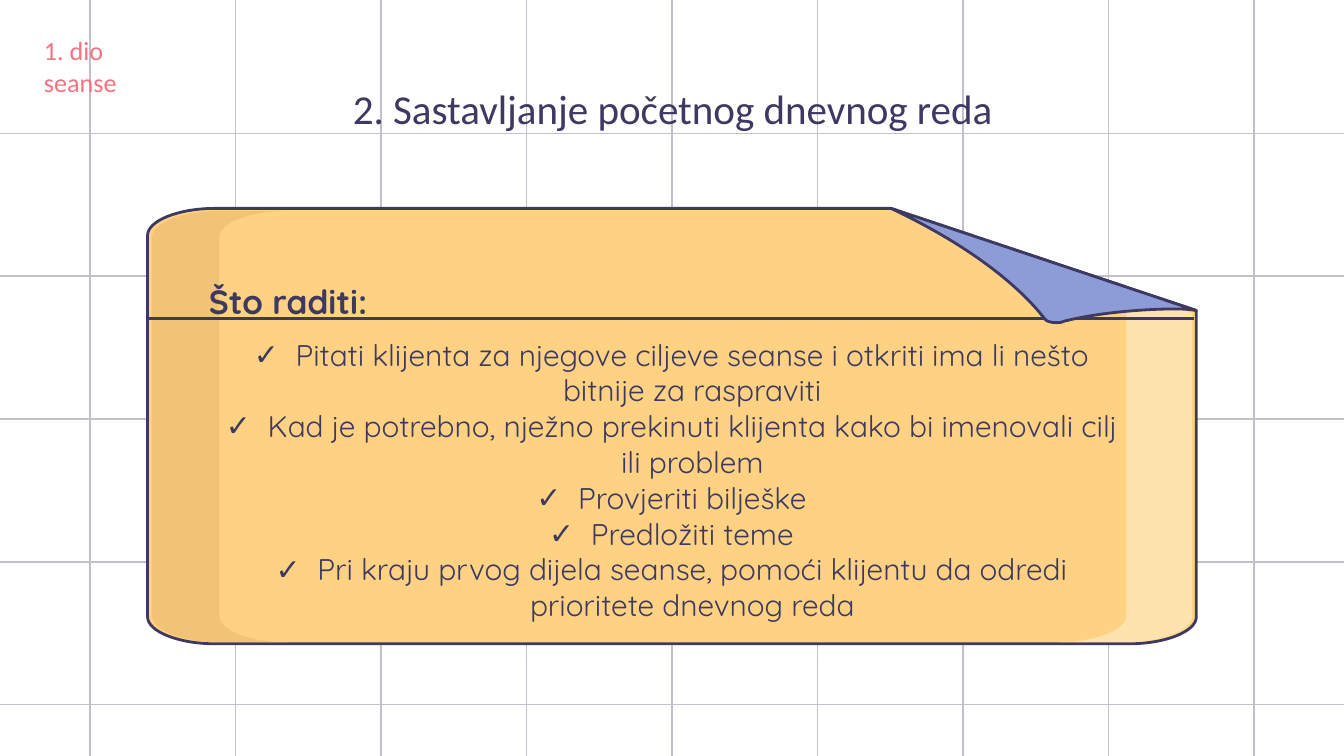
"""Build a slide with a folded paper note listing the steps for setting a session agenda."""
from lxml import etree
from pptx import Presentation
from pptx.dml.color import RGBColor
from pptx.enum.shapes import MSO_CONNECTOR
from pptx.enum.text import MSO_ANCHOR, PP_ALIGN
from pptx.oxml.ns import qn
from pptx.util import Cm, Pt

STRAIGHT = MSO_CONNECTOR.STRAIGHT
TOP, MIDDLE = MSO_ANCHOR.TOP, MSO_ANCHOR.MIDDLE
LEFT, CENTER = PP_ALIGN.LEFT, PP_ALIGN.CENTER

COLORS = {
    "ink": "3D3961", "grid": "C2C1CB", "note": "FFD283", "shade": "F2C277",
    "light": "FFE3AF", "fold": "8D9BD6", "label": "F67280",
}
WIDTH, HEIGHT = 25.4, 14.29
BLEED = 0.46
GRID_X = (1.7, 2.75, 9)
GRID_Y = (2.52, 2.7, 5)

TITLE = "2. Sastavljanje početnog dnevnog reda"
PART = "1. dio seanse"
HEADING = "Što raditi:"
STEPS = [
    "Pitati klijenta za njegove ciljeve seanse i otkriti ima li nešto bitnije za raspraviti",
    "Kad je potrebno, nježno prekinuti klijenta kako bi imenovali cilj ili problem",
    "Provjeriti bilješke",
    "Predložiti teme",
    "Pri kraju prvog dijela seanse, pomoći klijentu da odredi prioritete dnevnog reda",
]

NOTE = [
    (21.34, 12.17), (22.02, 12.17, 22.61, 11.94, 22.61, 11.66), (22.61, 10.85),
    (22.61, 5.87), (16.84, 3.94), (4.06, 3.94), (3.38, 3.94, 2.79, 4.17, 2.79, 4.45),
    (2.79, 10.85), (2.79, 11.66), (2.79, 11.94, 3.38, 12.17, 4.06, 12.17),
]
SHADE = [
    (5.41, 12.14), (4.7, 12.14, 4.14, 11.91, 4.14, 11.63), (4.14, 10.82), (4.14, 4.5),
    (4.14, 4.22, 4.7, 3.99, 5.41, 3.99), (4.14, 3.99),
    (3.43, 3.99, 2.87, 4.22, 2.87, 4.5), (2.87, 10.82), (2.87, 11.63),
    (2.87, 11.91, 3.43, 12.14, 4.14, 12.14),
]
LIGHT = [
    (21.29, 12.14), (21.95, 12.14, 22.53, 11.91, 22.53, 11.63), (22.53, 10.82),
    (22.53, 5.92), (21.29, 5.49), (21.29, 10.82), (21.29, 11.63),
    (21.29, 11.91, 20.7, 12.14, 20.02, 12.14),
]
FOLD = [
    (19.96, 6.1), (20.02, 6.1, 20.07, 6.1, 20.12, 6.07),
    (20.85, 5.89, 21.74, 5.84, 22.23, 5.84), (22.45, 5.84, 22.61, 5.87, 22.61, 5.87),
    (16.84, 3.94), (18.72, 4.83, 19.48, 5.69, 19.74, 6.02),
    (19.76, 6.07, 19.86, 6.1, 19.96, 6.1),
]


def rgb(name):
    return RGBColor.from_string(COLORS[name])


def add_line(s, x1, y1, x2, y2, color, width):
    line = s.shapes.add_connector(STRAIGHT, Cm(x1), Cm(y1), Cm(x2), Cm(y2))
    line.line.color.rgb = rgb(color)
    line.line.width = Pt(width)
    etree.SubElement(line._element.spPr, qn("a:effectLst"))


def curve_segments(sp, outline):
    segments = list(sp._element.iter(qn("a:lnTo")))
    for segment, values in zip(segments, outline[1:]):
        if len(values) == 2:
            continue
        curve = etree.Element(qn("a:cubicBezTo"))
        for x, y in zip(values[::2], values[1::2]):
            etree.SubElement(curve, qn("a:pt"), x=str(Cm(x) - sp.left), y=str(Cm(y) - sp.top))
        segment.getparent().replace(segment, curve)


def add_outline(s, outline, color, edge=False):
    ends = [(Cm(values[-2]), Cm(values[-1])) for values in outline]
    builder = s.shapes.build_freeform(*ends[0])
    builder.add_line_segments(ends[1:], close=False)
    sp = builder.convert_to_shape()
    curve_segments(sp, outline)
    etree.SubElement(next(sp._element.iter(qn("a:path"))), qn("a:close"))
    sp.shadow.inherit = False
    sp.fill.solid()
    sp.fill.fore_color.rgb = rgb(color)
    if edge:
        sp.line.color.rgb = rgb("ink")
        sp.line.width = Pt(1.5)
    else:
        sp.line.fill.background()


def add_text(s, box, lines, font, size, color="ink", bold=False, align=CENTER,
             anchor=MIDDLE, inset=(0, 0), indent=(0, 0), bullet=None):
    tf = s.shapes.add_textbox(*map(Cm, box)).text_frame
    tf.word_wrap = True
    tf.vertical_anchor = anchor
    tf.margin_left = tf.margin_right = Cm(inset[0])
    tf.margin_top = tf.margin_bottom = Cm(inset[1])
    for i, line in enumerate(lines):
        p = tf.add_paragraph() if i else tf.paragraphs[0]
        p.text = line
        p.alignment = align
        pPr = p._p.get_or_add_pPr()
        pPr.set("marL", str(Cm(indent[0])))
        pPr.set("indent", str(Cm(indent[1])))
        if bullet:
            clr = etree.SubElement(pPr, qn("a:buClr"))
            etree.SubElement(clr, qn("a:srgbClr"), val=COLORS[color])
            etree.SubElement(pPr, qn("a:buFont"), typeface=font)
            etree.SubElement(pPr, qn("a:buChar"), char=bullet)
        f = p.runs[0].font
        f.name, f.size, f.bold = font, Pt(size), bold
        f.color.rgb = rgb(color)


def main():
    prs = Presentation()
    prs.slide_width, prs.slide_height = Cm(WIDTH), Cm(HEIGHT)
    s = prs.slides.add_slide(prs.slide_layouts[6])

    start, gap, count = GRID_X
    for i in range(count):
        x = start + i * gap
        add_line(s, x, -BLEED, x, HEIGHT + BLEED, "grid", 0.75)
    start, gap, count = GRID_Y
    for i in range(count):
        y = start + i * gap
        add_line(s, -BLEED, y, WIDTH + BLEED, y, "grid", 0.75)

    add_outline(s, NOTE, "note", edge=True)
    add_outline(s, SHADE, "shade")
    add_outline(s, LIGHT, "light")
    add_line(s, 2.79, 6.02, 22.56, 6.02, "ink", 1.5)
    add_outline(s, FOLD, "fold", edge=True)

    add_text(s, (2.01, 1.24, 21.41, 1.6), [TITLE], "Calibri", 22)
    add_text(s, (4.22, 6.07, 16.94, 5.99), STEPS, "Quicksand", 16,
             indent=(0.79, -0.79), bullet="✓")
    add_text(s, (0.58, 0.53, 3.02, 0.86), [PART], "Calibri", 14, color="label",
             align=LEFT, anchor=TOP, inset=(0.25, 0.13))
    add_text(s, (2.79, 5.34, 4.95, 0.69), [HEADING], "Quicksand", 18, bold=True,
             indent=(1.27, -0.91))
    prs.save("out.pptx")


if __name__ == "__main__":
    main()
